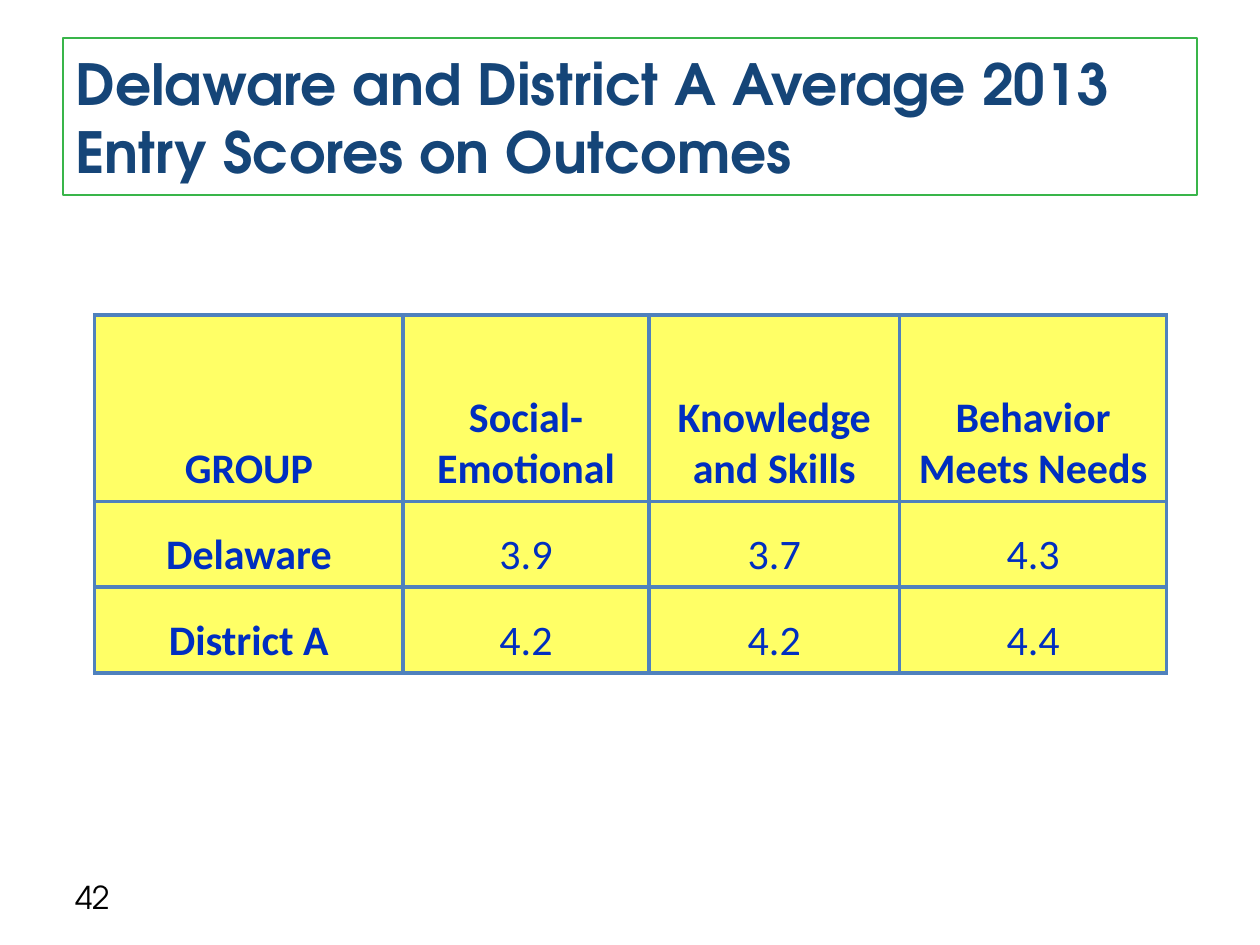
from lxml.etree import SubElement
from pptx import Presentation
from pptx.dml.color import RGBColor
from pptx.enum.shapes import MSO_SHAPE
from pptx.enum.text import MSO_ANCHOR, PP_ALIGN
from pptx.oxml.ns import qn
from pptx.util import Inches, Pt

WIDTH, HEIGHT = 10, 7.5
COLORS = {
    "title": "154578",
    "frame": "39B54A",
    "number": "000000",
    "cell": "FFFF66",
    "text": "002EC0",
    "border": "4F81BD",
}
HEADING_FONT = "TeX Gyre Adventor"
TABLE_FONT = "Calibri"
COLUMNS = [2.45, 1.95, 1.99, 2.12]
ROWS = [1.48, 0.68, 0.68]
SCORES = [
    ["GROUP", "Social-Emotional", "Knowledge\nand Skills", "Behavior\nMeets Needs"],
    ["Delaware", "3.9", "3.7", "4.3"],
    ["District A", "4.2", "4.2", "4.4"],
]


def color(name):
    return RGBColor.from_string(COLORS[name])


def area(left, top, width, height):
    return [
        Inches(share * side)
        for share, side in zip((left, top, width, height), (WIDTH, HEIGHT) * 2)
    ]


def write(frame, text, *, font, size, ink, bold=False, align=PP_ALIGN.LEFT):
    frame.word_wrap = True
    for index, line in enumerate(text.split("\n")):
        para = frame.paragraphs[0] if index == 0 else frame.add_paragraph()
        para.alignment = align
        span = para.add_run()
        span.text = line
        span.font.name = font
        span.font.size = Pt(size)
        span.font.bold = bold
        span.font.color.rgb = color(ink)


def add_title(page, text):
    box = page.shapes.add_shape(MSO_SHAPE.RECTANGLE, *area(0.05, 0.04, 0.9, 1 / 6))
    box.shadow.inherit = False
    box.fill.background()
    box.line.color.rgb = color("frame")
    box.line.width = Pt(1)
    box.text_frame.vertical_anchor = MSO_ANCHOR.MIDDLE
    write(box.text_frame, text, font=HEADING_FONT, size=32.4, ink="title", bold=True)


def add_page_number(page, text):
    box = page.shapes.add_textbox(*area(0.05, 0.923, 0.233, 0.053))
    box.text_frame.vertical_anchor = MSO_ANCHOR.MIDDLE
    write(box.text_frame, text, font=HEADING_FONT, size=18, ink="number")


def add_borders(cell):
    properties = cell._tc.get_or_add_tcPr()
    for side in ("lnL", "lnR", "lnT", "lnB"):
        line = SubElement(properties, qn(f"a:{side}"), w=str(Pt(2.25)))
        fill = SubElement(line, qn("a:solidFill"))
        SubElement(fill, qn("a:srgbClr"), val=COLORS["border"])


def add_scores(page):
    place = area(0.075, 1 / 3, 0.85, 0.378)
    table = page.shapes.add_table(len(ROWS), len(COLUMNS), *place).table
    for column, width in zip(table.columns, COLUMNS):
        column.width = Inches(width)
    for row, height in zip(table.rows, ROWS):
        row.height = Inches(height)
    for row_index, values in enumerate(SCORES):
        for column_index, value in enumerate(values):
            cell = table.cell(row_index, column_index)
            add_borders(cell)
            cell.fill.solid()
            cell.fill.fore_color.rgb = color("cell")
            cell.vertical_anchor = MSO_ANCHOR.BOTTOM
            write(
                cell.text_frame,
                value,
                font=TABLE_FONT,
                size=24,
                ink="text",
                bold=row_index == 0 or column_index == 0,
                align=PP_ALIGN.CENTER,
            )


def main():
    deck = Presentation()
    deck.slide_width, deck.slide_height = Inches(WIDTH), Inches(HEIGHT)
    page = deck.slides.add_slide(deck.slide_layouts[6])
    add_title(page, "Delaware and District A Average 2013 Entry Scores on Outcomes")
    add_page_number(page, "42")
    add_scores(page)
    deck.save("out.pptx")


if __name__ == "__main__":
    main()
